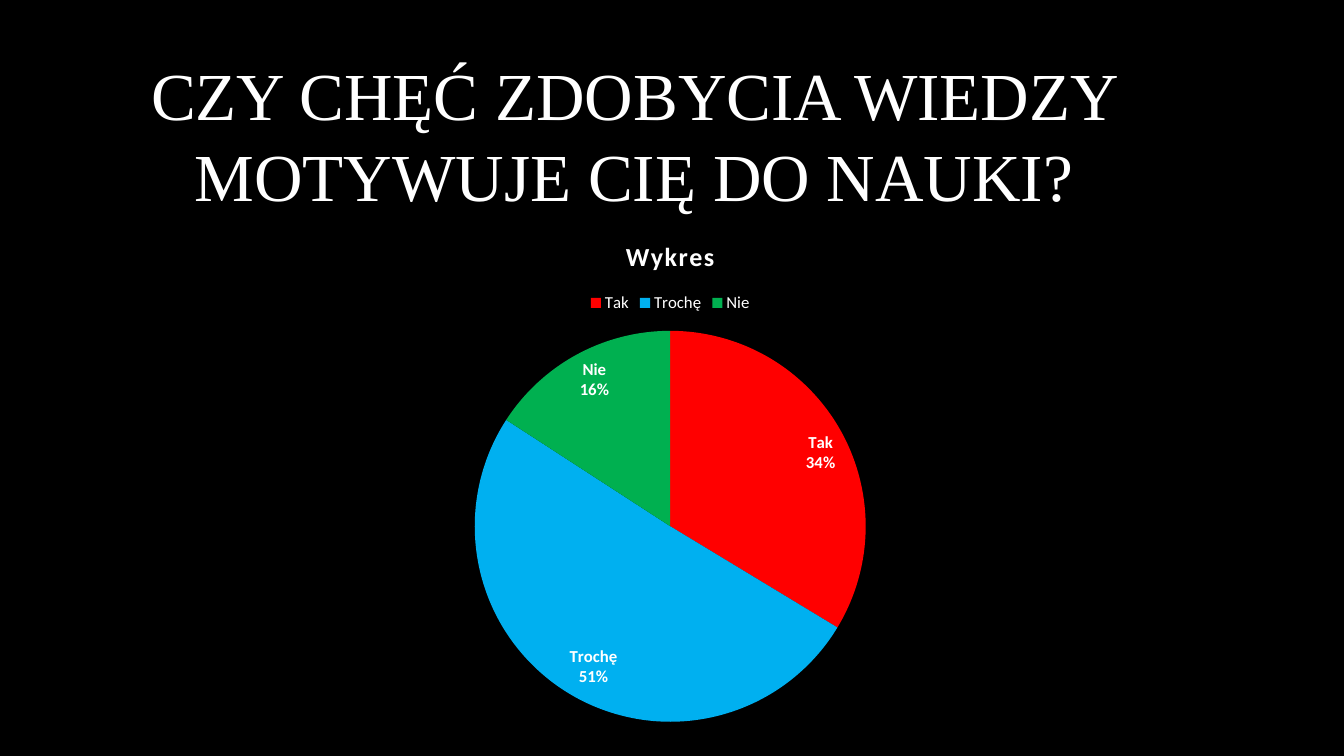
"""Build a survey slide with a title and a pie chart of the answers."""
from lxml.etree import SubElement
from pptx import Presentation
from pptx.chart.data import CategoryChartData
from pptx.dml.color import RGBColor
from pptx.enum.chart import XL_CHART_TYPE, XL_LABEL_POSITION, XL_LEGEND_POSITION
from pptx.enum.text import MSO_ANCHOR, PP_ALIGN
from pptx.oxml.ns import qn
from pptx.util import Pt

BLACK = RGBColor(0x00, 0x00, 0x00)
WHITE = RGBColor(0xFF, 0xFF, 0xFF)
RED = RGBColor(0xFF, 0x00, 0x00)
BLUE = RGBColor(0x00, 0xB0, 0xF0)
GREEN = RGBColor(0x00, 0xB0, 0x50)

QUESTION = "CZY CHĘĆ ZDOBYCIA WIEDZY MOTYWUJE CIĘ DO NAUKI?"
CHART_TITLE = "Wykres"
ANSWERS = [("Tak", 34, RED), ("Trochę", 51, BLUE), ("Nie", 16, GREEN)]
TITLE_BOX = (Pt(54), Pt(29.5), Pt(798), Pt(132.5))
CHART_BOX = (Pt(26.6), Pt(155.5), Pt(904.3), Pt(370))


def style_font(font, size, name="Calibri", bold=False):
    font.name = name
    font.size = Pt(size)
    font.bold = bold
    font.color.rgb = WHITE


def add_question(slide):
    title = slide.shapes.title
    title.left, title.top, title.width, title.height = TITLE_BOX
    frame = title.text_frame
    frame.text = QUESTION
    frame.word_wrap = True
    frame.vertical_anchor = MSO_ANCHOR.MIDDLE
    paragraph = frame.paragraphs[0]
    paragraph.alignment = PP_ALIGN.CENTER
    style_font(paragraph.runs[0].font, 48, "Times New Roman")


def add_answer_chart(slide):
    data = CategoryChartData()
    data.categories = [answer for answer, _, _ in ANSWERS]
    data.add_series(CHART_TITLE, [share for _, share, _ in ANSWERS])
    chart = slide.shapes.add_chart(XL_CHART_TYPE.PIE, *CHART_BOX, data).chart
    style_font(chart.font, 10)

    chart.has_title = True
    chart.chart_title.include_in_layout = False
    chart.chart_title.text_frame.text = CHART_TITLE
    title_run = chart.chart_title.text_frame.paragraphs[0].runs[0]
    style_font(title_run.font, 18.6, bold=True)
    title_run._r.get_or_add_rPr().set("spc", "100")

    chart.has_legend = True
    chart.legend.position = XL_LEGEND_POSITION.TOP
    chart.legend.include_in_layout = False
    style_font(chart.legend.font, 12)

    plot = chart.plots[0]
    plot.vary_by_categories = True
    series = plot.series[0]
    for index, (_, _, color) in enumerate(ANSWERS):
        fill = series.points[index].format.fill
        fill.solid()
        fill.fore_color.rgb = color

    labels = series.data_labels
    labels.show_category_name = True
    labels.show_value = True
    labels.number_format = '0"%"'
    labels.number_format_is_linked = False
    labels.position = XL_LABEL_POSITION.INSIDE_END
    style_font(labels.font, 12, bold=True)
    label_xml = labels._element
    separator = SubElement(label_xml, qn("c:separator"))
    separator.text = "\n"
    label_xml.find(qn("c:showBubbleSize")).addnext(separator)


def main():
    presentation = Presentation()
    presentation.slide_width, presentation.slide_height = Pt(960), Pt(540)
    slide = presentation.slides.add_slide(presentation.slide_layouts[5])
    slide.background.fill.solid()
    slide.background.fill.fore_color.rgb = BLACK
    add_question(slide)
    add_answer_chart(slide)
    presentation.save("out.pptx")


if __name__ == "__main__":
    main()
